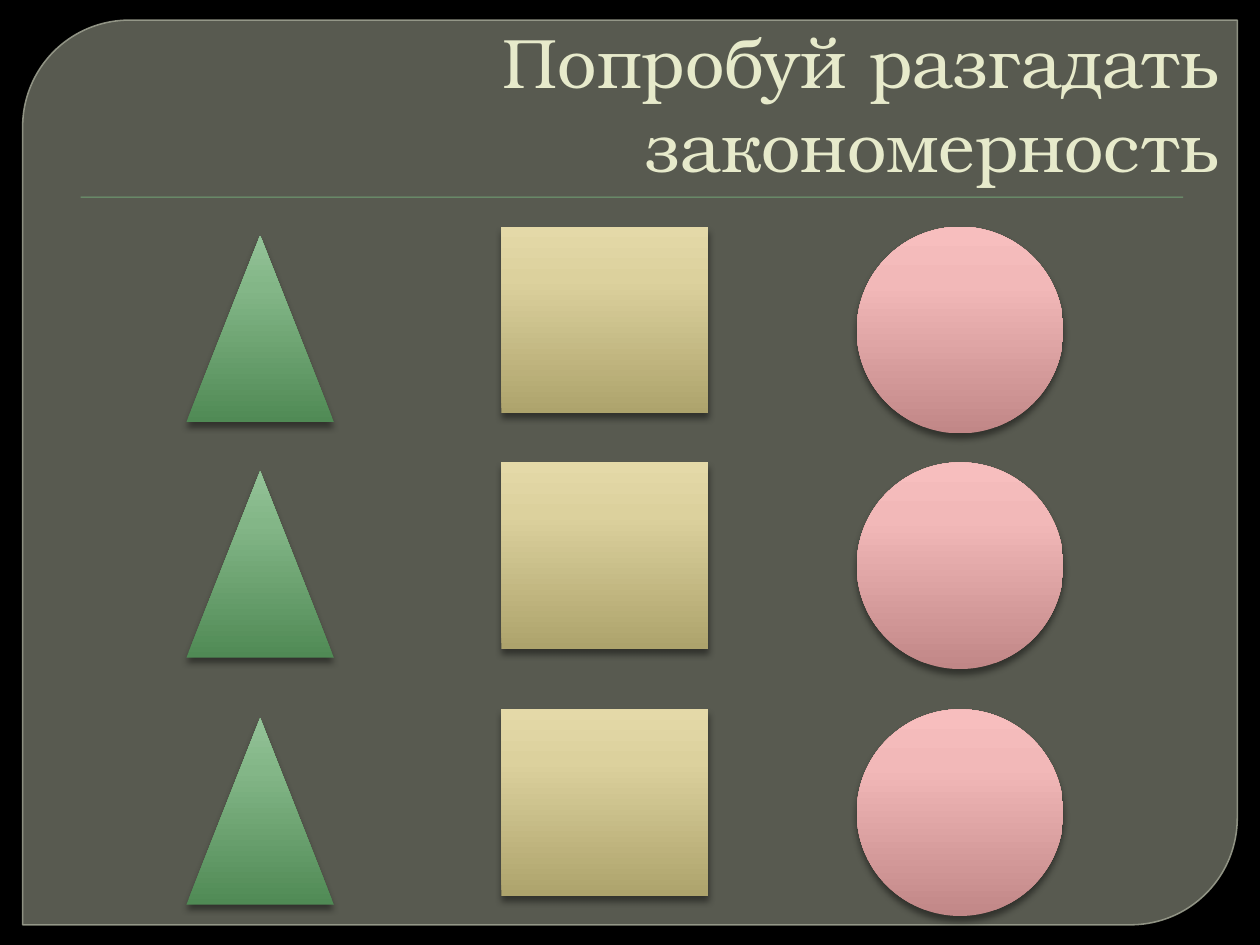
from copy import deepcopy

from lxml import etree
from pptx import Presentation
from pptx.dml.color import RGBColor
from pptx.enum.shapes import MSO_SHAPE
from pptx.enum.text import MSO_ANCHOR, PP_ALIGN
from pptx.oxml.ns import qn
from pptx.util import Inches, Pt

PANEL = MSO_SHAPE.ROUND_2_DIAG_RECTANGLE
RULE = MSO_SHAPE.RECTANGLE
TRIANGLE = MSO_SHAPE.ISOSCELES_TRIANGLE
SQUARE = MSO_SHAPE.ACTION_BUTTON_CUSTOM
CIRCLE = MSO_SHAPE.DONUT
RIGHT = PP_ALIGN.RIGHT
BOTTOM = MSO_ANCHOR.BOTTOM

ROW_TOPS = (1.8, 3.67, 5.63)
GRADIENT_POSITIONS = (0, 0.72, 1)
# kind, left, offset below the row top, width, height, gradient from the bottom up
COLUMNS = (
    (TRIANGLE, 1.48, 0.07, 1.17, 1.48, ("508A55", "83B687", "94C298")),
    (SQUARE, 3.98, 0, 1.64, 1.48, ("ADA36C", "DCD19D", "E4D9A8")),
    (CIRCLE, 6.8, 0, 1.64, 1.64, ("C18787", "F2B8B8", "F7BEBE")),
)
TITLE_FORMAT = {"name": "TeX Gyre Bonum", "size": Pt(40), "bold": False}


def rgb(code):
    return RGBColor.from_string(code)


def add_figure(page, kind, *place):
    figure = page.shapes.add_shape(kind, *map(Inches, place))
    figure.shadow.inherit = False
    figure.line.fill.background()
    return figure


def set_alpha(color_parent, percent):
    """Make the first solid colour below an element partly transparent."""
    color = next(color_parent.iter(qn("a:srgbClr")))
    etree.SubElement(color, qn("a:alpha"), val=str(percent * 1000))


def add_shadow(figure, blur, distance, percent):
    """Cast a black shadow straight down."""
    effects = figure._element.spPr.find(qn("a:effectLst"))
    shadow = etree.SubElement(
        effects, qn("a:outerShdw"), blurRad=str(Pt(blur)),
        dist=str(Pt(distance)), dir="5400000", algn="ctr", rotWithShape="0")
    etree.SubElement(shadow, qn("a:srgbClr"), val="000000")
    set_alpha(shadow, percent)


def fill_gradient(figure, codes):
    """Fill with three colours that run from bottom to top."""
    fill = figure.fill
    fill.gradient()
    fill.gradient_angle = 90
    stop_list = next(figure._element.spPr.iter(qn("a:gsLst")))
    stop_list.append(deepcopy(stop_list[-1]))
    for stop, position, code in zip(fill.gradient_stops, GRADIENT_POSITIONS, codes):
        stop.position = position
        stop.color.rgb = rgb(code)


def add_panel(page):
    panel = add_figure(page, PANEL, 0.18, 0.16, 9.64, 7.18)
    panel.adjustments[0] = 0.118
    panel.adjustments[1] = 0
    panel.fill.solid()
    panel.fill.fore_color.rgb = rgb("888B7B")
    set_alpha(panel._element.spPr.find(qn("a:solidFill")), 65)
    panel.line.color.rgb = rgb("9DA090")
    panel.line.width = Pt(0.87)
    set_alpha(panel._element.spPr.find(qn("a:ln")), 88)


def add_rule(page):
    rule = add_figure(page, RULE, 0.64, 1.56, 8.75, 0.01)
    rule.fill.solid()
    rule.fill.fore_color.rgb = rgb("72A376")
    add_shadow(rule, 1, 1, 75)


def add_title(page, wording):
    box = page.shapes.add_textbox(*map(Inches, (0, 0.28, 9.77, 1.25)))
    frame = box.text_frame
    frame.word_wrap = True
    frame.vertical_anchor = BOTTOM
    para = frame.paragraphs[0]
    para.alignment = RIGHT
    span = para.add_run()
    span.text = wording
    for name, value in TITLE_FORMAT.items():
        setattr(span.font, name, value)
    span.font.color.rgb = rgb("E7EACB")


def add_pattern(page):
    for top in ROW_TOPS:
        for kind, left, offset, width, height, codes in COLUMNS:
            figure = add_figure(page, kind, left, top + offset, width, height)
            if kind == CIRCLE:
                figure.adjustments[0] = 0.5
            fill_gradient(figure, codes)
            add_shadow(figure, 4, 3, 43)


def main():
    deck = Presentation()
    deck.slide_width, deck.slide_height = Inches(10), Inches(7.5)
    page = deck.slides.add_slide(deck.slide_layouts[6])
    page.background.fill.solid()
    page.background.fill.fore_color.rgb = rgb("000000")
    add_panel(page)
    add_rule(page)
    add_title(page, "Попробуй разгадать закономерность")
    add_pattern(page)
    deck.save("out.pptx")


if __name__ == "__main__":
    main()
